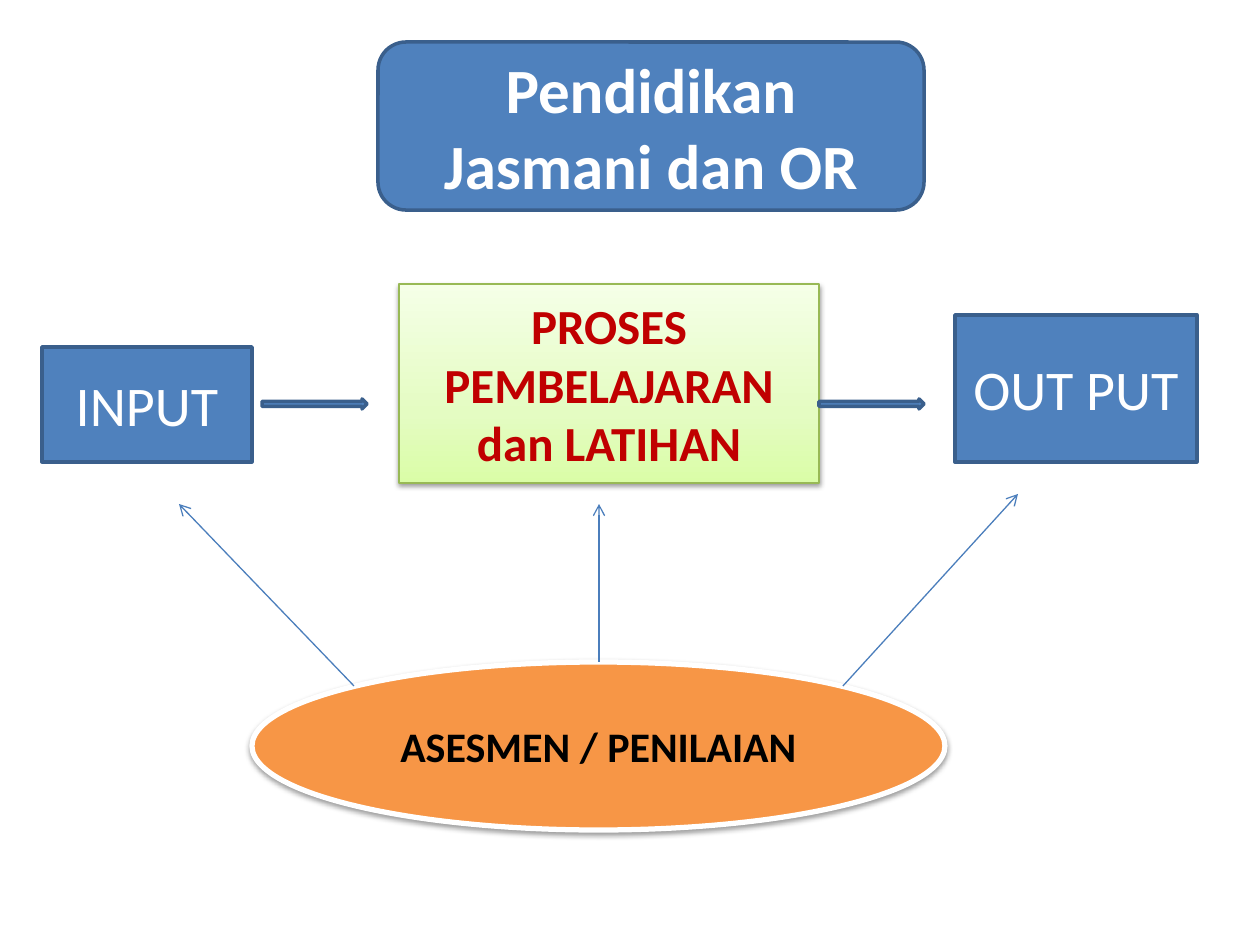
from pptx import Presentation, util as u
from pptx.dml.color import RGBColor
from pptx.enum import shapes, text
from pptx.oxml import parse_xml
from pptx.oxml.ns import nsdecls, qn

PX = 914400 / 126
MS = shapes.MSO_SHAPE

THEME = {
    "font": "Calibri",
    "arrow_line": ("4B7EBC", 0.75),
    "blue": {"fill": "4F81BD", "line": ("3A5F8C", 2)},
    "green": {"stops": [(0, "DAFDA7"), (35, "E4FCC2"), (100, "F5FFE7")],
              "line": ("98B955", 0.75), "shadow": True},
    "orange": {"fill": "F79646", "line": ("FFFFFF", 3), "shadow": True},
    # size, colour, bold
    "title": (36, "FFFFFF", True),
    "stage": (32, "FFFFFF", False),
    "process": (28, "C00000", True),
    "assessment": (24, "000000", True),
}

# preset, box in pixels, look, wording, type style
BOXES = [
    (MS.ROUNDED_RECTANGLE, (378, 42, 546, 168), "blue", "Pendidikan Jasmani dan OR", "title"),
    (MS.RECTANGLE, (42, 347, 210, 115), "blue", "INPUT", "stage"),
    (MS.RECTANGLE, (399, 284, 420, 199), "green", "PROSES PEMBELAJARAN dan LATIHAN", "process"),
    (MS.RECTANGLE, (955, 315, 242, 147), "blue", "OUT PUT", "stage"),
    (MS.RIGHT_ARROW, (262, 399, 105, 10), "blue", None, None),
    (MS.RIGHT_ARROW, (819, 399, 105, 10), "blue", None, None),
    (MS.OVAL, (252, 662, 693, 168), "orange", "ASESMEN / PENILAIAN", "assessment"),
]

# start and end in pixels, from the assessment to each stage
ARROWS = [(354, 686, 179, 504), (599, 662, 599, 504), (843, 686, 1018, 494)]


def emu(*pixels):
    """Turn pixels into EMU."""
    return [u.Emu(round(v * PX)) for v in pixels]


def rgb(code):
    """Turn a hex code into a colour."""
    return RGBColor.from_string(code)


def set_line(line, colour, width):
    """Give an outline its colour and width."""
    line.color.rgb = rgb(colour)
    line.width = u.Pt(width)


def set_gradient(sp, stops):
    """Fill a shape with stops running from bottom to top."""
    sp.fill.gradient()
    sp.fill.gradient_angle = 90
    stop_list = next(sp._element.spPr.iter(qn("a:gsLst")))
    for old in list(stop_list):
        stop_list.remove(old)
    for pos, colour in stops:
        stop_list.append(parse_xml(
            f'<a:gs {nsdecls("a")} pos="{pos * 1000}"><a:srgbClr val="{colour}"/></a:gs>'))


def add_shadow(sp):
    """Put a soft shadow below a shape."""
    sp._element.spPr.find(qn("a:effectLst")).append(parse_xml(
        f'<a:outerShdw {nsdecls("a")} blurRad="{u.Pt(3.1)}" dist="{u.Pt(1.6)}" '
        'dir="5400000" rotWithShape="0"><a:srgbClr val="000000">'
        '<a:alpha val="38000"/></a:srgbClr></a:outerShdw>'))


def add_text(sp, wording, style):
    """Write centred text in a shape."""
    size, colour, bold = THEME[style]
    tf = sp.text_frame
    tf.word_wrap = True
    tf.vertical_anchor = text.MSO_ANCHOR.MIDDLE
    p = tf.paragraphs[0]
    p.alignment = text.PP_ALIGN.CENTER
    r = p.add_run()
    r.text = wording
    r.font.name, r.font.size, r.font.bold = THEME["font"], u.Pt(size), bold
    r.font.color.rgb = rgb(colour)


def add_box(s, preset, box, look, wording, style):
    """Add one filled shape with its text."""
    look = THEME[look]
    sp = s.shapes.add_shape(preset, *emu(*box))
    sp.shadow.inherit = False
    if "stops" in look:
        set_gradient(sp, look["stops"])
    else:
        sp.fill.solid()
        sp.fill.fore_color.rgb = rgb(look["fill"])
    set_line(sp.line, *look["line"])
    if look.get("shadow"):
        add_shadow(sp)
    if wording:
        add_text(sp, wording, style)


def add_arrow(s, ends):
    """Add a thin line with an open arrowhead at its end."""
    cx = s.shapes.add_connector(shapes.MSO_CONNECTOR.STRAIGHT, *emu(*ends))
    set_line(cx.line, *THEME["arrow_line"])
    cx.line._get_or_add_ln().append(parse_xml(f'<a:tailEnd {nsdecls("a")} type="arrow"/>'))
    cx._element.spPr.append(parse_xml(f'<a:effectLst {nsdecls("a")}/>'))


prs = Presentation()
prs.slide_width, prs.slide_height = emu(1260, 945)
s = prs.slides.add_slide(prs.slide_layouts[6])
for box in BOXES:
    add_box(s, *box)
for ends in ARROWS:
    add_arrow(s, ends)
prs.save("out.pptx")
